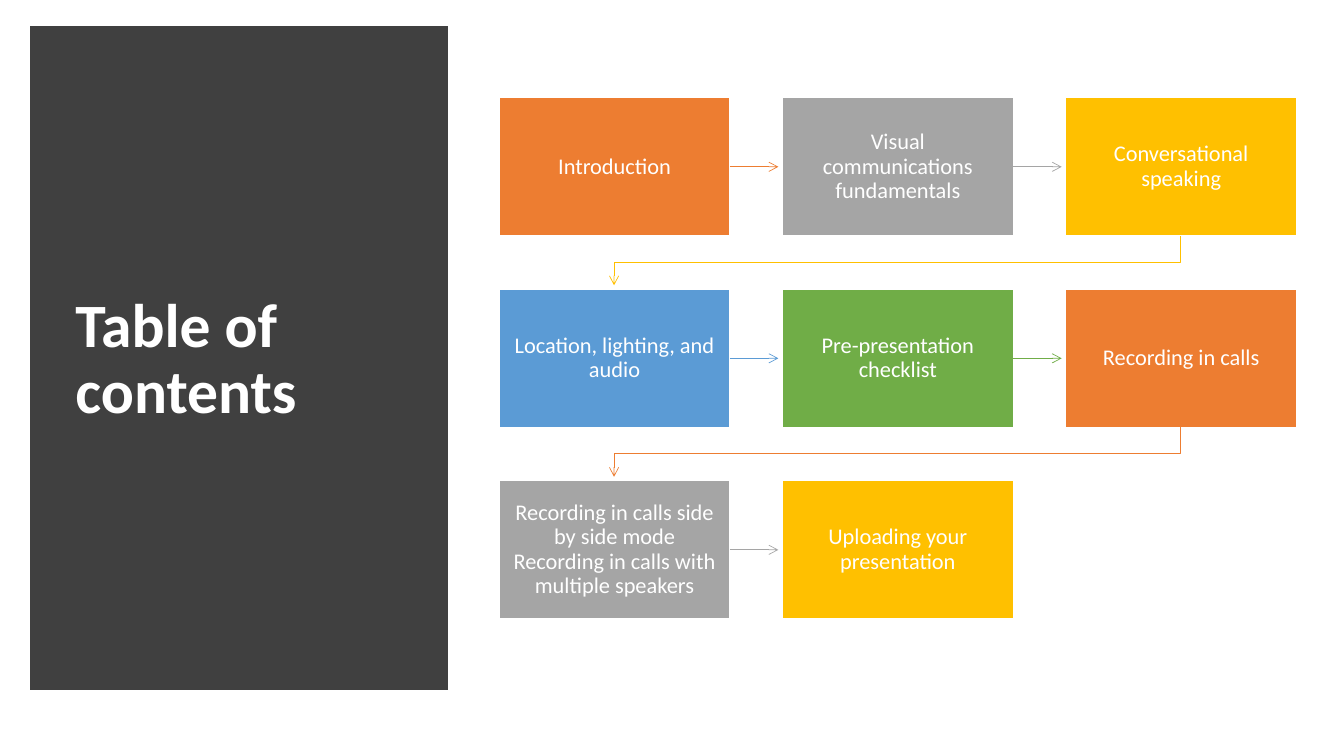
from lxml import etree
from pptx import Presentation
from pptx.dml.color import RGBColor
from pptx.enum.shapes import MSO_CONNECTOR as CONNECTOR, MSO_SHAPE as SHAPE
from pptx.enum.text import MSO_ANCHOR as ANCHOR, PP_ALIGN as ALIGN
from pptx.oxml.ns import qn
from pptx.util import Pt

PX = 9144
COLORS = {
    "white": "FFFFFF", "dark": "404040", "orange": "ED7D31", "gray": "A5A5A5",
    "gold": "FFC000", "blue": "5B9BD5", "green": "70AD47",
}
TOPICS = [
    ("Introduction", "orange"),
    ("Visual communications fundamentals", "gray"),
    ("Conversational speaking", "gold"),
    ("Location, lighting, and audio", "blue"),
    ("Pre-presentation checklist", "green"),
    ("Recording in calls", "orange"),
    ("Recording in calls side by side mode Recording in calls with multiple speakers", "gray"),
    ("Uploading your presentation", "gold"),
]
COLUMNS = 3
BOX_WIDTH, BOX_HEIGHT = 229, 137
COLUMN_STEP, ROW_STEP = 281, 190
ARROW_GAP, ELBOW_DROP = 4, 26


def px(*lengths):
    """Turn px lengths into EMU."""
    return [length * PX for length in lengths]


def color(name):
    """Look up a named colour."""
    return RGBColor.from_string(COLORS[name])


def add_box(slide, box, fill, line, line_width):
    """Add a filled rectangle with sharp corners."""
    shape = slide.shapes.add_shape(SHAPE.RECTANGLE, *px(*box))
    shape.shadow.inherit = False
    shape.fill.solid()
    shape.fill.fore_color.rgb = color(fill)
    shape.line.color.rgb = color(line)
    shape.line.width = Pt(line_width)
    etree.SubElement(shape.line._get_or_add_ln(), qn("a:miter"), lim="800000")
    return shape


def write(shape, text, size, align, insets, bold=False):
    """Write one white paragraph, centred vertically."""
    frame = shape.text_frame
    frame.word_wrap = True
    frame.vertical_anchor = ANCHOR.MIDDLE
    frame.margin_left = frame.margin_right = insets[0] * PX
    frame.margin_top = frame.margin_bottom = insets[1] * PX
    paragraph = frame.paragraphs[0]
    paragraph.text = text
    paragraph.alignment = align
    paragraph.line_spacing = 0.9
    font = paragraph.font
    font.name, font.size, font.bold = "Calibri", Pt(size), bold
    font.color.rgb = color("white")


def style_arrow(arrow, color_name):
    """Give a line its colour, width and open arrowhead."""
    arrow.line.color.rgb = color(color_name)
    arrow.line.width = Pt(0.5)
    line = arrow.line._get_or_add_ln()
    etree.SubElement(line, qn("a:tailEnd"), type="arrow")


def add_straight_arrow(slide, source, end_x, y, color_name):
    """Draw an arrow from the right side of a box towards the next one."""
    arrow = slide.shapes.add_connector(CONNECTOR.STRAIGHT, *px(end_x, y, end_x, y))
    arrow.begin_connect(source, 3)
    arrow.end_x, arrow.end_y = end_x * PX, arrow.begin_y
    style_arrow(arrow, color_name)
    etree.SubElement(arrow._element.spPr, qn("a:effectLst"))


def add_elbow_arrow(slide, start, end, color_name):
    """Draw an arrow from the end of a row to the start of the next."""
    (start_x, start_y), (end_x, end_y) = start, end
    turn_y = start_y + ELBOW_DROP
    builder = slide.shapes.build_freeform(start_x, start_y, scale=PX)
    builder.add_line_segments([(start_x, turn_y), (end_x, turn_y), end], close=False)
    arrow = builder.convert_to_shape()
    arrow.shadow.inherit = False
    arrow.fill.background()
    style_arrow(arrow, color_name)


def add_title_panel(slide, left, top, width, height):
    """Draw the dark panel with the slide title."""
    add_box(slide, (left, top, width, height), "dark", "dark", 10)
    title = slide.shapes.add_textbox(*px(left + 28, top + 37, width - 54, height - 70))
    write(title, "Table of contents", 44, ALIGN.LEFT, (10, 5), bold=True)


def add_topic_flow(slide, left, top):
    """Lay out the topics in rows and link each to the next."""
    for index, (topic, fill) in enumerate(TOPICS):
        row, column = divmod(index, COLUMNS)
        x, y = left + column * COLUMN_STEP, top + row * ROW_STEP
        box = add_box(slide, (x, y, BOX_WIDTH, BOX_HEIGHT), fill, "white", 1)
        write(box, topic, 16, ALIGN.CENTER, (11, 12))
        if index == len(TOPICS) - 1:
            continue
        if column < COLUMNS - 1:
            end_x = x + COLUMN_STEP - ARROW_GAP
            add_straight_arrow(slide, box, end_x, y + BOX_HEIGHT // 2, fill)
        else:
            start = (x + BOX_WIDTH // 2, y + BOX_HEIGHT)
            end = (left + BOX_WIDTH // 2, y + ROW_STEP - ARROW_GAP)
            add_elbow_arrow(slide, start, end, fill)


def main():
    """Build and save the slide."""
    presentation = Presentation()
    presentation.slide_width, presentation.slide_height = px(1333, 750)
    slide = presentation.slides.add_slide(presentation.slide_layouts[6])
    add_title_panel(slide, 37, 33, 400, 645)
    add_topic_flow(slide, 495, 97)
    presentation.save("out.pptx")


if __name__ == "__main__":
    main()
